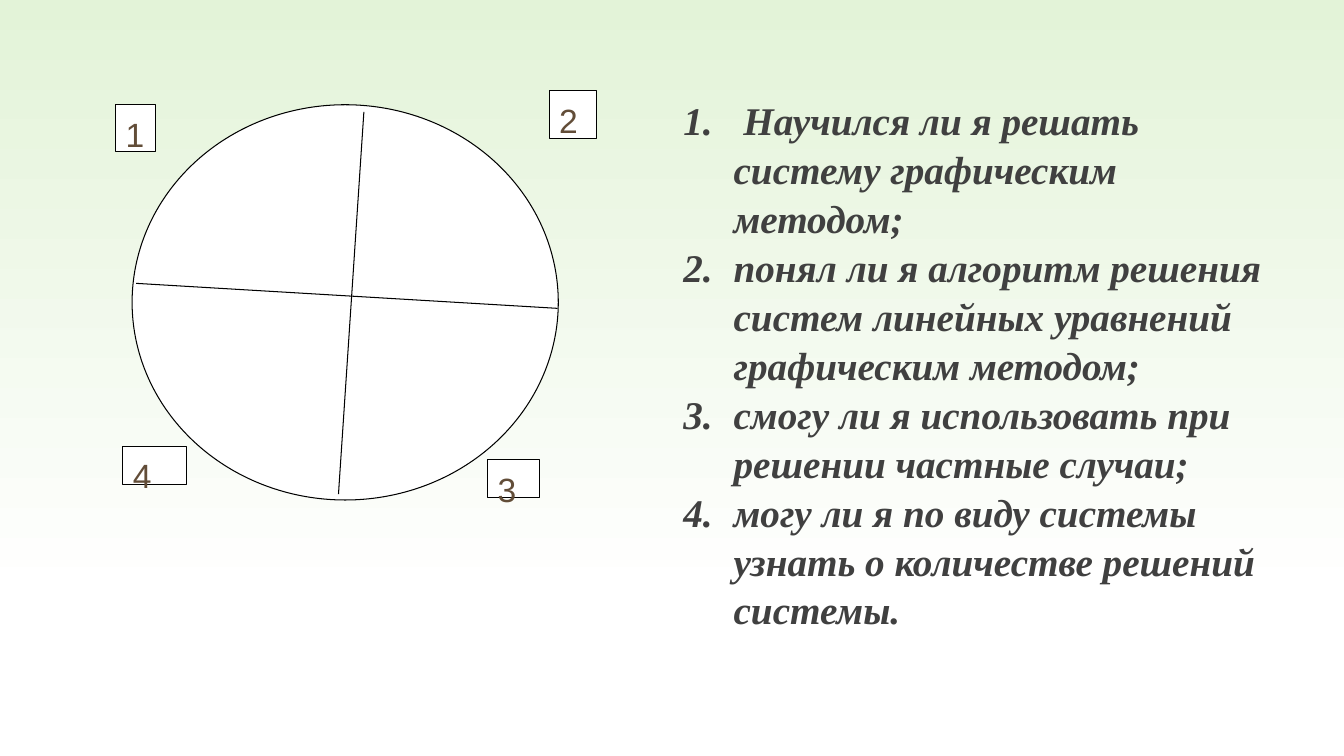
from lxml import etree
from pptx import Presentation
from pptx import util as u
from pptx.dml import color
from pptx.enum import shapes, text
from pptx.oxml import ns

COLORS = {"mint": "E3F3D8", "white": "FFFFFF", "line": "000000",
          "digit": "624D38", "body": "404040"}

QUESTIONS = [
    " Научился ли я решать систему графическим методом;",
    "понял ли я алгоритм решения систем линейных уравнений графическим методом;",
    "смогу ли я использовать при решении частные случаи;",
    "могу ли я по виду системы узнать о количестве решений системы.",
]
QUESTIONS_BOX = (16.97, 2.26, 15.7, 17.86)
CIRCLE_BOX = (3.33, 2.64, 10.74, 9.96)
DIVIDERS = [(3.43, 7.14, 14.05, 7.77), (9.17, 2.82, 8.53, 12.45)]
SECTOR_LABELS = [
    ("3", (12.29, 11.58, 1.3, 0.97)),
    ("4", (3.1, 11.25, 1.6, 0.97)),
    ("1", (2.92, 2.64, 0.99, 1.19)),
    ("2", (13.84, 2.29, 1.19, 1.19)),
]


def rgb(name):
    return color.RGBColor.from_string(COLORS[name])


def cm(lengths):
    return [u.Cm(n) for n in lengths]


def write(sp, lines, size, font, ink, bold=False, italic=False,
          spacing=1.0, numbered=False):
    tf = sp.text_frame
    tf.word_wrap = True
    tf.vertical_anchor = text.MSO_ANCHOR.TOP
    for i, line in enumerate(lines):
        p = tf.add_paragraph() if i else tf.paragraphs[0]
        p.alignment = text.PP_ALIGN.LEFT
        p.line_spacing = spacing
        r = p.add_run()
        r.text = line
        r.font.size = u.Pt(size)
        r.font.name = font
        r.font.bold = bold
        r.font.italic = italic
        r.font.color.rgb = rgb(ink)
        if numbered:
            pPr = p._p.get_or_add_pPr()
            pPr.set("marL", str(u.Cm(1.27)))
            pPr.set("indent", str(-u.Cm(1.27)))
            etree.SubElement(pPr, ns.qn("a:buFont"), typeface="+mj-lt")
            etree.SubElement(pPr, ns.qn("a:buAutoNum"), type="arabicPeriod")


def add_outlined(s, kind, box):
    sp = s.shapes.add_shape(kind, *cm(box))
    sp.shadow.inherit = False
    sp.fill.solid()
    sp.fill.fore_color.rgb = rgb("white")
    sp.line.color.rgb = rgb("line")
    sp.line.width = u.Pt(0.75)
    return sp


def add_divider(s, ends):
    line = s.shapes.add_connector(shapes.MSO_CONNECTOR.STRAIGHT, *cm(ends))
    line.line.color.rgb = rgb("line")
    line.line.width = u.Pt(0.75)
    etree.SubElement(line._element.spPr, ns.qn("a:effectLst"))


def main():
    prs = Presentation()
    prs.slide_width, prs.slide_height = cm((33.87, 19.05))
    s = prs.slides.add_slide(prs.slide_layouts[6])

    fill = s.background.fill
    fill.gradient()
    fill.gradient_angle = 270
    for stop, name, position in zip(fill.gradient_stops, ("mint", "white"), (0, 0.79)):
        stop.color.rgb = rgb(name)
        stop.position = position

    add_outlined(s, shapes.MSO_SHAPE.OVAL, CIRCLE_BOX)
    for ends in DIVIDERS:
        add_divider(s, ends)
    for digit, box in SECTOR_LABELS:
        sp = add_outlined(s, shapes.MSO_SHAPE.RECTANGLE, box)
        write(sp, [digit], size=24, font="Arial", ink="digit", spacing=1.1)

    sp = s.shapes.add_textbox(*cm(QUESTIONS_BOX))
    write(sp, QUESTIONS, size=28, font="Times New Roman", ink="body",
          bold=True, italic=True, spacing=1.04, numbered=True)

    prs.save("out.pptx")


if __name__ == "__main__":
    main()
